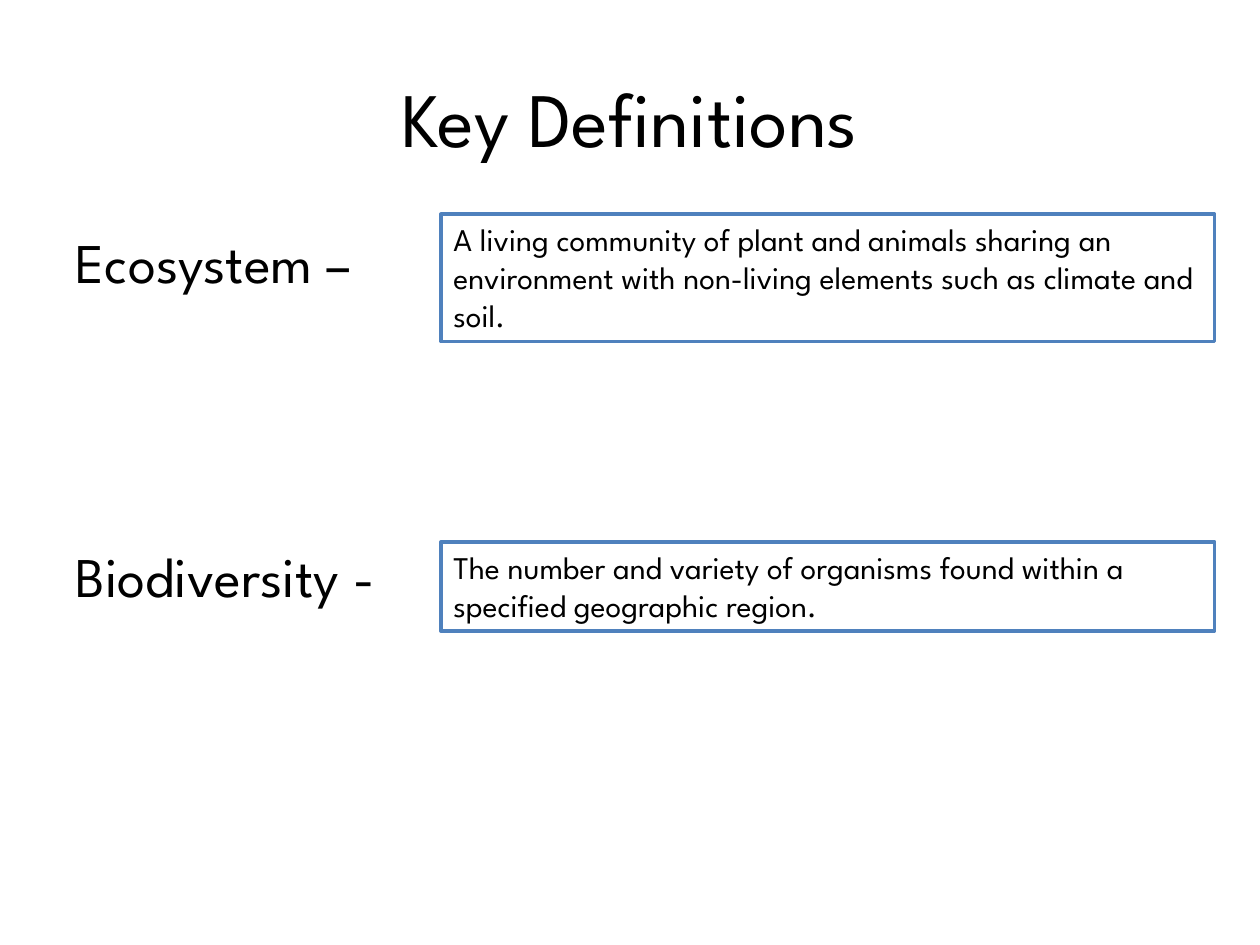
from dataclasses import dataclass

from lxml.etree import SubElement
from pptx import Presentation
from pptx.dml.color import RGBColor
from pptx.enum.shapes import MSO_SHAPE
from pptx.enum.text import MSO_ANCHOR, MSO_AUTO_SIZE, PP_ALIGN
from pptx.oxml.ns import qn
from pptx.util import Inches, Pt


@dataclass(frozen=True)
class Theme:
    font: str = "League Spartan"
    text: RGBColor = RGBColor(0, 0, 0)
    paper: RGBColor = RGBColor(255, 255, 255)
    outline: RGBColor = RGBColor(0x4F, 0x81, 0xBD)
    title_size: int = 44
    term_size: int = 32
    definition_size: int = 18
    outline_width: int = 2


THEME = Theme()
WIDTH, HEIGHT = Inches(10), Inches(7.5)
MARGIN = 0.05 * WIDTH
CONTENT_WIDTH = WIDTH - 2 * MARGIN
TITLE_BOX = (MARGIN, 0.04 * HEIGHT, CONTENT_WIDTH, HEIGHT / 6)
TERMS_BOX = (MARGIN, 0.23 * HEIGHT + Inches(0.03), CONTENT_WIDTH, 0.66 * HEIGHT)
DEFINITION_LEFT, DEFINITION_WIDTH = 0.35 * WIDTH, 0.614 * WIDTH
TERM_GAP = Pt(141)

TERMS = ["Ecosystem –", "Biodiversity -"]
# Text, top and height in inches
DEFINITIONS = [
    ("A living community of plant and animals sharing an environment with "
     "non-living elements such as climate and soil.", 1.7, 1.01),
    ("The number and variety of organisms found within a specified "
     "geographic region.", 4.3, 0.71),
]


def place(shape, box):
    shape.left, shape.top, shape.width, shape.height = map(int, box)


def add_run(paragraph, text, size):
    run = paragraph.add_run()
    run.text = text
    run.font.name = THEME.font
    run.font.size = Pt(size)
    run.font.color.rgb = THEME.text


def fill_title(shape, box):
    place(shape, box)
    shape.text_frame.vertical_anchor = MSO_ANCHOR.MIDDLE
    paragraph = shape.text_frame.paragraphs[0]
    paragraph.alignment = PP_ALIGN.CENTER
    add_run(paragraph, "Key Definitions", THEME.title_size)


def fill_terms(shape, box):
    """List the terms without bullets, spread down the box."""
    place(shape, box)
    frame = shape.text_frame
    frame.auto_size = MSO_AUTO_SIZE.NONE
    for index, term in enumerate(TERMS):
        paragraph = frame.add_paragraph() if index else frame.paragraphs[0]
        if index:
            paragraph.space_before = TERM_GAP
        SubElement(paragraph._p.get_or_add_pPr(), qn("a:buNone"))
        add_run(paragraph, term, THEME.term_size)


def add_definition(slide, text, box):
    shape = slide.shapes.add_shape(MSO_SHAPE.RECTANGLE, *map(int, box))
    shape.shadow.inherit = False
    shape.fill.solid()
    shape.fill.fore_color.rgb = THEME.paper
    shape.line.color.rgb = THEME.outline
    shape.line.width = Pt(THEME.outline_width)
    frame = shape.text_frame
    frame.word_wrap = True
    frame.auto_size = MSO_AUTO_SIZE.SHAPE_TO_FIT_TEXT
    frame.vertical_anchor = MSO_ANCHOR.TOP
    paragraph = frame.paragraphs[0]
    paragraph.alignment = PP_ALIGN.LEFT
    add_run(paragraph, text, THEME.definition_size)


def build_definitions_slide(presentation):
    slide = presentation.slides.add_slide(presentation.slide_layouts[1])
    fill_title(slide.shapes.title, TITLE_BOX)
    fill_terms(slide.placeholders[1], TERMS_BOX)
    for text, top, height in DEFINITIONS:
        box = (DEFINITION_LEFT, Inches(top), DEFINITION_WIDTH, Inches(height))
        add_definition(slide, text, box)


def main():
    presentation = Presentation()
    presentation.slide_width, presentation.slide_height = WIDTH, HEIGHT
    build_definitions_slide(presentation)
    presentation.save("out.pptx")


if __name__ == "__main__":
    main()
